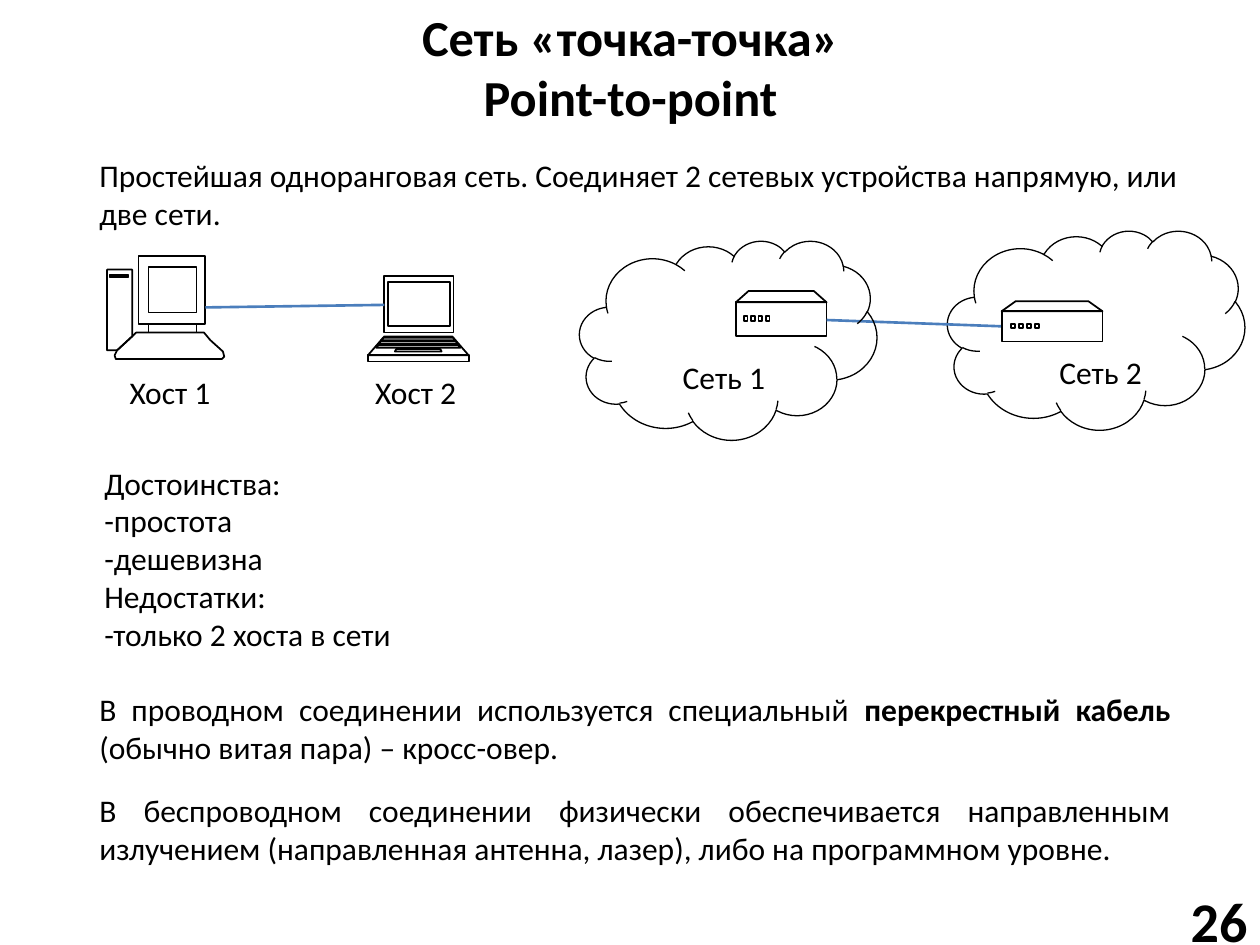
import pptx
import pptx.dml.color
import pptx.enum.shapes
import pptx.enum.text
import pptx.util
import lxml.etree

COLORS = {"ink": "000000", "paper": "FFFFFF", "link": "4B7EBC"}
FONT = "Calibri"
WIDTH, HEIGHT = pptx.util.Inches(10), pptx.util.Inches(7.5)
COLS, ROWS = 100, 75
ALIGN = pptx.enum.text.PP_ALIGN
ANCHOR = pptx.enum.text.MSO_ANCHOR


def col(n):
    return round(WIDTH * n / COLS)


def row(n):
    return round(HEIGHT * n / ROWS)


def color(name):
    return pptx.dml.color.RGBColor.from_string(COLORS[name])


def set_line(sp, name, width):
    sp.line.color.rgb = color(name)
    sp.line.width = pptx.util.Pt(width)


def add_text(s, box, paragraphs, size=18, bold=False, align=ALIGN.LEFT,
             anchor=ANCHOR.TOP, wrap=True, grow=True):
    """Each paragraph is a list of (text, bold) runs or a plain string."""
    left, top, width, height = box
    tf = s.shapes.add_textbox(col(left), row(top), col(width), row(height)).text_frame
    tf.word_wrap = wrap
    tf.vertical_anchor = anchor
    if grow:
        tf.auto_size = pptx.enum.text.MSO_AUTO_SIZE.SHAPE_TO_FIT_TEXT
    for i, content in enumerate(paragraphs):
        p = tf.paragraphs[0] if i == 0 else tf.add_paragraph()
        p.alignment = align
        p.font.name = FONT
        p.font.size = pptx.util.Pt(size)
        p.font.bold = bold
        p.font.color.rgb = color("ink")
        if isinstance(content, str):
            p.text = content
            continue
        for text, strong in content:
            r = p.add_run()
            r.text = text
            if strong:
                r.font.bold = True


def add_cloud(s, left, top):
    sp = s.shapes.add_shape(pptx.enum.shapes.MSO_SHAPE.CLOUD,
                            col(left), row(top), col(23.6), row(15.8))
    sp.shadow.inherit = False
    sp.fill.background()
    set_line(sp, "ink", 0.75)


def add_link(s, x1, y1, x2, y2):
    c = s.shapes.add_connector(pptx.enum.shapes.MSO_CONNECTOR.STRAIGHT,
                               col(x1), row(y1), col(x2), row(y2))
    set_line(c, "link", 1.5)
    lxml.etree.SubElement(c._element.spPr, pptx.oxml.ns.qn("a:effectLst"))


def rect(left, top, right, bottom):
    return [(left, top), (right, top), (right, bottom), (left, bottom)]


def trapezoid(center, half_top, half_bottom, top, bottom):
    return [(center - half_top, top), (center + half_top, top),
            (center + half_bottom, bottom), (center - half_bottom, bottom)]


def add_device(s, outlines):
    """Draw closed outlines, given in grid units, as one shape."""
    outlines = [[(col(x), row(y)) for x, y in points] for points in outlines]
    builder = s.shapes.build_freeform(*outlines[0][0])
    for i, points in enumerate(outlines):
        if i:
            builder.move_to(*points[0])
        builder.add_line_segments(points[1:], close=True)
    sp = builder.convert_to_shape()
    sp.shadow.inherit = False
    sp.fill.solid()
    sp.fill.fore_color.rgb = color("paper")
    set_line(sp, "ink", 1)


def add_desktop(s):
    tower = [(8.5, 21.4), (10.5, 21.4), (10.5, 26.7), (9.3, 27.8), (8.5, 27.8)]
    keyboard = [(10.5, 26.7), (10.8, 26.4), (16.2, 26.4), (16.7, 27), (17.7, 27.9),
                (17.8, 28.3), (17.6, 28.5), (9.2, 28.5), (9.1, 28.2), (9.3, 27.8)]
    drive = rect(8.7, 21.8, 10.2, 22)
    monitor = rect(11, 20.3, 16.3, 25.7)
    screen = rect(11.8, 21.2, 15.6, 24.8)
    neck = rect(11.8, 25.7, 15.6, 26.4)
    add_device(s, [tower, drive, monitor, screen, neck, keyboard])


def add_laptop(s):
    center = 33.2
    lid = rect(30.5, 21.9, 36, 26.4)
    screen = rect(30.8, 22.4, 35.7, 25.9)
    deck = trapezoid(center, 2.7, 4, 26.7, 28.2)
    front = rect(29.2, 28.2, 37.2, 28.7)
    keys = [trapezoid(center, 2.75 + 0.2 * i, 2.95 + 0.2 * i,
                      26.8 + 0.3 * i, 27 + 0.3 * i) for i in range(3)]
    touchpad = trapezoid(center, 1.75, 1.85, 27.7, 27.9)
    add_device(s, [lid, screen, deck, front, *keys, touchpad])


def add_router(s, left, top, width, height):
    right, edge = left + width, top + height / 4
    lid = trapezoid(left + width / 2, 0.36 * width, width / 2, top, edge)
    front = rect(left, edge, right, top + height)
    lamps = []
    for i in range(4):
        x = left + width * (0.09 + 0.08 * i)
        lamps.append(rect(x, top + 0.56 * height, x + 0.04 * width, top + 0.66 * height))
    add_device(s, [lid, front, *lamps])


def main():
    prs = pptx.Presentation()
    prs.slide_width, prs.slide_height = WIDTH, HEIGHT
    s = prs.slides.add_slide(prs.slide_layouts[6])

    add_cloud(s, 75.2, 18.3)
    add_text(s, (2.8, 0.5, 94.5, 9.5), ["Сеть «точка-точка»\vPoint-to-point"], size=28.8,
             bold=True, align=ALIGN.CENTER, anchor=ANCHOR.MIDDLE, grow=False)
    add_text(s, (88.6, 71, 11.4, 4), ["26"], size=32, bold=True,
             align=ALIGN.RIGHT, anchor=ANCHOR.MIDDLE, grow=False)
    add_text(s, (6.9, 11.9, 91, 7.1), [
        "Простейшая одноранговая сеть. Соединяет 2 сетевых устройства напрямую, или две сети."])

    add_desktop(s)
    add_router(s, 58.4, 23.1, 7.2, 3.6)
    add_laptop(s)
    add_link(s, 16.3, 24.4, 30.5, 24.2)
    add_link(s, 65.6, 25.4, 79.5, 25.9)
    add_router(s, 79.5, 23.9, 8, 3.2)
    add_cloud(s, 46, 19.1)

    for label, left, top in [("Хост 1", 9.3, 29.1), ("Хост 2", 28.8, 29.1),
                             ("Сеть 1", 53.2, 27.9), ("Сеть 2", 83.1, 27.5)]:
        add_text(s, (left, top, 8.6, 4), [label], wrap=False)

    add_text(s, (6.9, 54.3, 87, 7.1), [[
        ("В проводном соединении используется специальный ", False),
        ("перекрестный кабель ", True),
        ("(обычно витая пара) – кросс-овер.", False)]], align=ALIGN.JUSTIFY)
    add_text(s, (7.3, 36.3, 87, 16.2), [
        "Достоинства:", "-простота", "-дешевизна",
        "Недостатки:", "-только 2 хоста в сети"], align=ALIGN.JUSTIFY)
    add_text(s, (6.9, 62.3, 87, 7.1), [
        "В беспроводном соединении физически обеспечивается направленным излучением "
        "(направленная антенна, лазер), либо на программном уровне."], align=ALIGN.JUSTIFY)

    prs.save("out.pptx")


if __name__ == "__main__":
    main()
